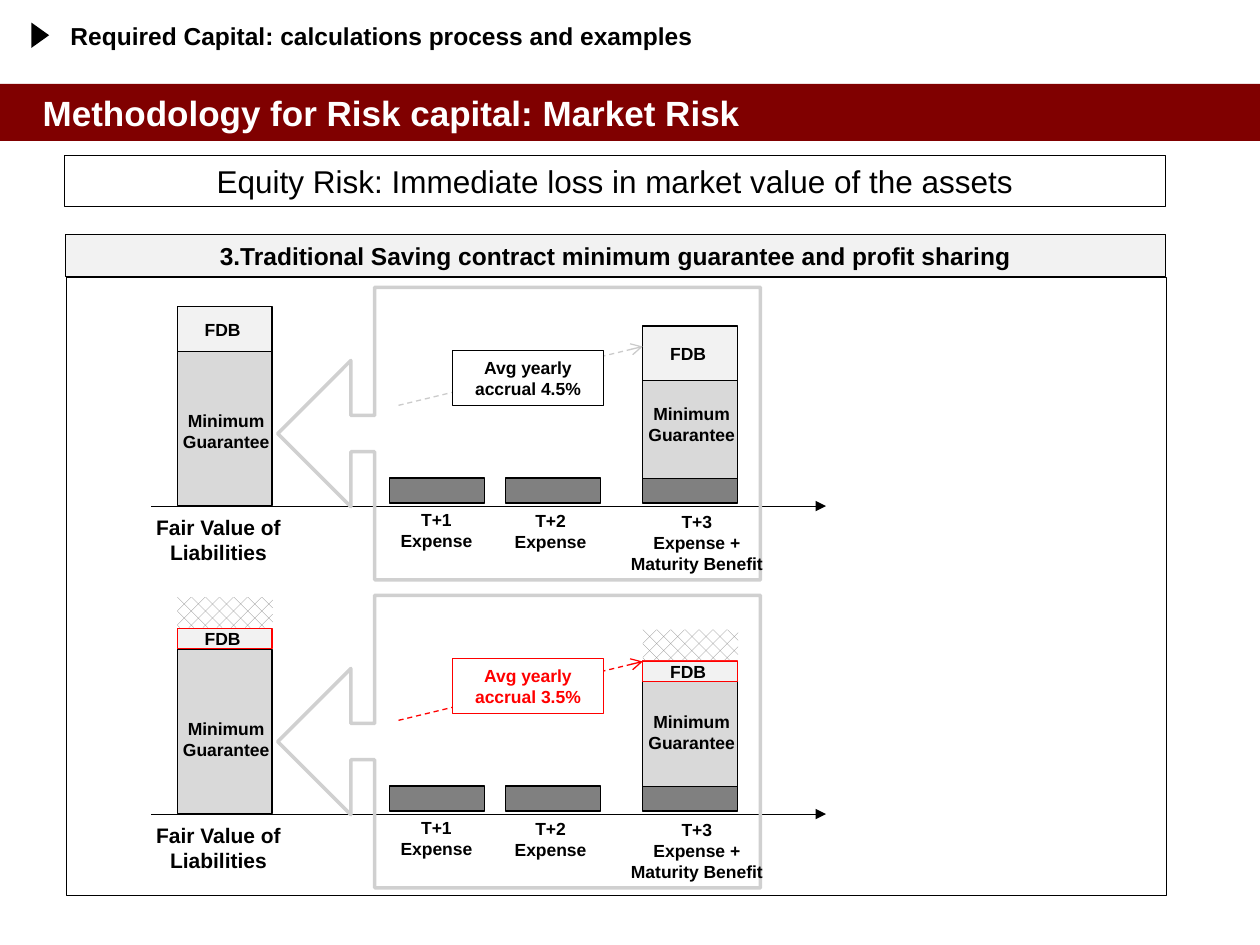
from dataclasses import dataclass

from lxml import etree
from pptx import Presentation
from pptx.dml.color import RGBColor
from pptx.enum.dml import MSO_LINE, MSO_PATTERN
from pptx.enum.shapes import MSO_CONNECTOR, MSO_SHAPE
from pptx.enum.text import MSO_ANCHOR, PP_ALIGN
from pptx.oxml.ns import qn
from pptx.util import Pt

RECT = MSO_SHAPE.RECTANGLE
TRI = MSO_SHAPE.ISOSCELES_TRIANGLE
CALL = MSO_SHAPE.LEFT_ARROW_CALLOUT
LINE = MSO_CONNECTOR.STRAIGHT
DASH = MSO_LINE.DASH
HATCH = MSO_PATTERN.PERCENT_25
TOP, MID = MSO_ANCHOR.TOP, MSO_ANCHOR.MIDDLE
LEFT, MIDDLE = PP_ALIGN.LEFT, PP_ALIGN.CENTER


@dataclass(frozen=True)
class Theme:
    font: str = "Arial"
    black: str = "000000"
    white: str = "FFFFFF"
    red: str = "FF0000"
    band: str = "800000"
    dark: str = "808080"
    mid: str = "D9D9D9"
    pale: str = "F2F2F2"
    frame: str = "D0D0D0"
    trend: str = "CBCBCB"
    title: int = 20
    lead: int = 18
    head: int = 14
    base: int = 12
    label: int = 10


T = Theme()
color = RGBColor.from_string


def box(area, text="", kind=RECT, fill=None, edge=None, width=0.75,
        size=T.label, ink=T.black, bold=True, align=MIDDLE, anchor=TOP, inset=None):
    """Draw a shape, or a plain text box if it has neither fill nor edge."""
    area = [Pt(v) for v in area]
    if fill or edge:
        shape = shapes.add_shape(kind, *area)
        shape.shadow.inherit = False
        if fill:
            shape.fill.solid()
            shape.fill.fore_color.rgb = color(fill)
        else:
            shape.fill.background()
        if edge:
            shape.line.color.rgb = color(edge)
            shape.line.width = Pt(width)
        else:
            shape.line.fill.background()
    else:
        shape = shapes.add_textbox(*area)
    if text:
        frame = shape.text_frame
        look = {"word_wrap": True, "vertical_anchor": anchor}
        if inset is not None:
            look |= {f"margin_{side}": Pt(inset)
                     for side in ("left", "top", "right", "bottom")}
        for key, val in look.items():
            setattr(frame, key, val)
        frame.text = text
        for para in frame.paragraphs:
            para.alignment = align
            for key, val in {"name": T.font, "size": Pt(size), "bold": bold}.items():
                setattr(para.font, key, val)
            para.font.color.rgb = color(ink)
    return shape


def arrow(start, end, ink, width, tip, style, dash=None):
    """Draw a line; tip is the headEnd (start) or tailEnd (end) that gets the arrowhead."""
    line = shapes.add_connector(LINE, *[Pt(v) for v in (*start, *end)])
    line.line.color.rgb = color(ink)
    line.line.width = Pt(width)
    if dash:
        line.line.dash_style = dash
    etree.SubElement(line.line._get_or_add_ln(), qn(f"a:{tip}"), type=style)
    etree.SubElement(line._element.spPr, qn("a:effectLst"))


deck = Presentation()
deck.slide_width, deck.slide_height = Pt(720), Pt(540)
shapes = deck.slides.add_slide(deck.slide_layouts[6]).shapes

# Headings and the main frame
box((0, 48, 720, 32.5), fill=T.band)
box((17.3, 47.5, 648, 33.8), "Methodology for Risk capital: Market Risk",
    size=T.title, ink=T.white, align=LEFT, anchor=MID)
mark = box((15.8, 15.1, 14.4, 10.1), kind=TRI, fill=T.black)
mark.rotation = 90
box((40.3, 12.2, 612, 28), "Required Capital: calculations process and examples",
    size=T.head, align=LEFT, inset=0)
box((36.9, 89, 629, 29), "Equity Risk: Immediate loss in market value of the assets",
    edge=T.black, size=T.lead, bold=False, anchor=MID)
box((38, 158.5, 628.5, 353), edge=T.black, width=0.25)
box((37.6, 134, 628.5, 24.2),
    "3.Traditional Saving contract minimum guarantee and profit sharing",
    fill=T.pale, edge=T.black, size=T.head, anchor=MID)

# Two panels: base case, then lower accrual; fdb holds (top, height) per column
cases = [
    dict(y=0, rate="4.5%", ink=T.black, trend=T.trend, tip=198,
         fdb=[(175, 26), (186.3, 31)], cut=False),
    dict(y=176, rate="3.5%", ink=T.red, trend=T.red, tip=378,
         fdb=[(359.2, 11.3), (377.8, 11.5)], cut=True),
]
wide = 54
cols = [101.4, 367.3]
for case in cases:
    y, ink = case["y"], case["ink"]
    arrow((86.4, y + 289.2), (472, y + 289.2), T.black, 0.25, "tailEnd", "triangle")
    box((81.7, y + 290.2, 86.4, 36.7), "Fair Value of Liabilities", size=T.base)

    for x in (222.7, 289, cols[1]):
        box((x, y + 273.2, wide, 14.2), fill=T.dark, edge=T.black)
    box((cols[0], y + 195, wide, 93.8), fill=T.mid, edge=T.black)
    box((cols[1], y + 211, wide, 62.5), fill=T.mid, edge=T.black)
    for x, (top, high) in zip(cols, case["fdb"]):
        box((x, top, wide, high), fill=T.pale, edge=ink)
        if case["cut"]:
            loss = box((x, top - 18, 54.5, 17.5), fill=T.white)
            loss.fill.patterned()
            loss.fill.pattern = HATCH
            loss.fill.fore_color.rgb = color(T.dark)
            loss.fill.back_color.rgb = color(T.white)

    call = box((158.7, y + 164.2, 275.8, 167.2), kind=CALL, edge=T.frame, width=2)
    for i, val in enumerate((0.124, 0.25, 0.25, 0.799)):
        call.adjustments[i] = val
    arrow((cols[1], case["tip"]), (227, case["tip"] + 33.8),
          case["trend"], 0.75, "headEnd", "arrow", DASH)
    box((258.5, y + 200.4, 86.4, 31.5), f"Avg yearly accrual {case['rate']}",
        fill=T.white, edge=ink, ink=ink, anchor=MID)

    for x, (top, high) in zip((84, 350), case["fdb"]):
        box((x, top + high / 2 - 9.5, 86.4, 19.4), "FDB")
    for x, top in ((86, 230.6), (352, 226.6)):
        box((x, y + top, 86.4, 31.5), "Minimum\nGuarantee")
    for x, top, w, text in ((206.2, 287.2, 86.4, "T+1\nExpense"),
                            (271.4, 287.7, 86.4, "T+2\nExpense"),
                            (348, 288.5, 100.4, "T+3\nExpense + Maturity Benefit")):
        box((x, y + top, w, 31.5), text)

deck.save("out.pptx")
